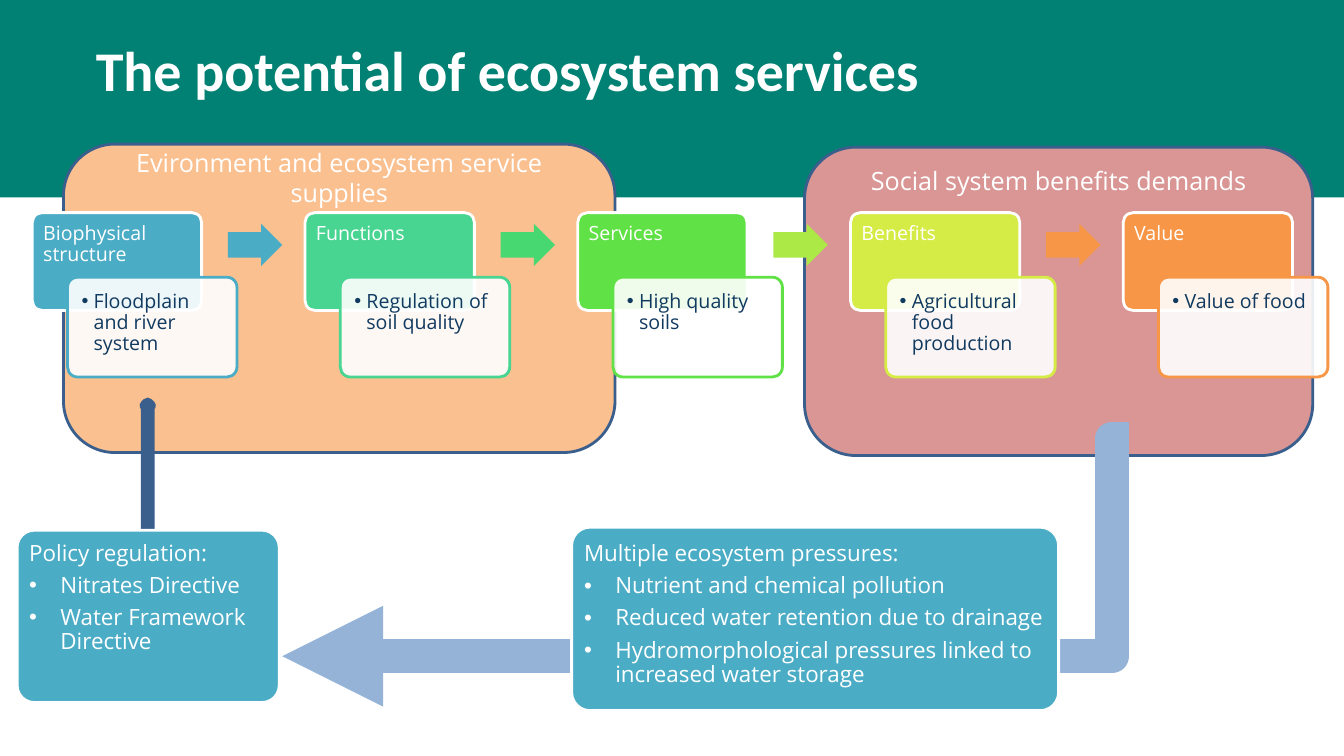
from lxml import etree
from pptx import Presentation
from pptx import util as u
from pptx.dml.color import RGBColor
from pptx.enum import shapes, text
from pptx.oxml.ns import qn

HUES = {
    "band": "008173", "peach": "FAC090", "rose": "D99694", "edge": "3A5F8C",
    "white": "FFFFFF", "ink": "113A60", "teal": "4BACC6", "mint": "48D491",
    "jade": "47D872", "green": "60E146", "lime": "ACE946", "lemon": "D5EC46",
    "amber": "F79646", "blue": "4F81BD", "sky": "95B3D7",
}
KIND = shapes.MSO_SHAPE
TOP = text.MSO_ANCHOR.TOP
MIDDLE = text.MSO_ANCHOR.MIDDLE
LEFT = text.PP_ALIGN.LEFT
CENTER = text.PP_ALIGN.CENTER


class Deck:
    face = "Open Sans"

    def __init__(self):
        self.prs = Presentation()
        self.prs.slide_width = u.Inches(13.33)
        self.prs.slide_height = u.Inches(7.5)
        self.slide = self.prs.slides.add_slide(self.prs.slide_layouts[5])
        self.items = self.slide.shapes

    def rgb(self, hue):
        return RGBColor.from_string(HUES[hue])

    def font(self, para, size, hue, face=None, bold=False):
        para.font.size = u.Pt(size)
        para.font.name = face or self.face
        para.font.bold = bold
        para.font.color.rgb = self.rgb(hue)

    def shape(self, kind, box, fill, edge=None, width=2, adj=(), alpha=None):
        item = self.items.add_shape(kind, *map(u.Inches, box))
        item.shadow.inherit = False
        item.fill.solid()
        item.fill.fore_color.rgb = self.rgb(fill)
        if alpha:
            tint = item._element.spPr.find(qn("a:solidFill")).find(qn("a:srgbClr"))
            etree.SubElement(tint, qn("a:alpha"), val=str(alpha * 1000))
        if edge:
            item.line.color.rgb = self.rgb(edge)
            item.line.width = u.Pt(width)
        else:
            item.line.fill.background()
        for i, val in enumerate(adj):
            item.adjustments[i] = val
        return item

    def label(self, item, lines, size, hue, pad, after, hang=0, first=0):
        frame = item.text_frame
        frame.word_wrap = True
        frame.vertical_anchor = TOP
        frame.margin_left = frame.margin_right = u.Inches(pad[0])
        frame.margin_top = frame.margin_bottom = u.Inches(pad[1])
        for i, line in enumerate(lines):
            para = frame.paragraphs[0] if i == 0 else frame.add_paragraph()
            para.text = line
            para.alignment = LEFT
            para.line_spacing = 0.9
            para.space_after = u.Pt(after)
            if hang and i >= first:
                props = para._p.get_or_add_pPr()
                props.set("marL", str(u.Inches(hang)))
                props.set("indent", str(-u.Inches(hang)))
                etree.SubElement(props, qn("a:buFont"), typeface="Arial")
                etree.SubElement(props, qn("a:buChar"), char="•")
            self.font(para, size, hue)

    def title(self, words, box):
        item = self.items.title
        item.left, item.top, item.width, item.height = map(u.Inches, box)
        frame = item.text_frame
        frame.auto_size = text.MSO_AUTO_SIZE.NONE
        frame.vertical_anchor = TOP
        para = frame.paragraphs[0]
        para.text = words
        para.alignment = LEFT
        self.font(para, 40, "white", "Calibri", True)
        self.items._spTree.append(item._element)

    def panel(self, box, fill, head):
        self.shape(KIND.ROUNDED_RECTANGLE, box, fill, "edge")
        left, top, width, _ = box
        spot = (left + 0.15, top + 0.03, width - 0.3, 0.6)
        frame = self.items.add_textbox(*map(u.Inches, spot)).text_frame
        frame.word_wrap = True
        frame.vertical_anchor = MIDDLE
        frame.margin_top = frame.margin_bottom = 0
        para = frame.paragraphs[0]
        para.text = head
        para.alignment = CENTER
        self.font(para, 18, "white")

    def stage(self, left, hue, head, note, after):
        card = self.shape(KIND.ROUNDED_RECTANGLE, (left, 2.11, 1.68, 0.97),
                          hue, "white", adj=[0.1])
        self.label(card, [head], 14, "white", (0.08, 0.08), 4.9)
        leaf = self.shape(KIND.ROUNDED_RECTANGLE, (left + 0.35, 2.75, 1.68, 0.99),
                          "white", hue, adj=[0.1], alpha=90)
        self.label(leaf, [note], 14, "ink", (0.11, 0.11), 2.1, hang=0.12)
        if after:
            self.shape(KIND.RIGHT_ARROW, (left + 1.94, 2.22, 0.54, 0.42),
                       after, adj=[0.6, 0.5])

    def block(self, box, lines, pad):
        item = self.shape(KIND.ROUNDED_RECTANGLE, box, "teal", "white", adj=[0.1])
        self.label(item, lines, 16, "white", pad, 5.6, hang=0.31, first=1)

    def elbow(self, start, end, hue, width, bend):
        link = self.items.add_connector(
            shapes.MSO_CONNECTOR.ELBOW, *map(u.Inches, start + end))
        link.line.color.rgb = self.rgb(hue)
        link.line.width = u.Pt(width)
        props = link._element.spPr
        etree.SubElement(props.find(qn("a:ln")), qn("a:tailEnd"), type="triangle")
        etree.SubElement(props, qn("a:effectLst"))
        shape = props.find(qn("a:prstGeom"))
        marks = shape.find(qn("a:avLst"))
        if marks is None:
            marks = etree.SubElement(shape, qn("a:avLst"))
        etree.SubElement(marks, qn("a:gd"), name="adj1",
                         fmla=f"val {round(bend * 100000)}")


def main():
    deck = Deck()
    deck.shape(KIND.RECTANGLE, (0, 0, 13.33, 1.96), "band")
    deck.panel((0.63, 1.43, 5.47, 3.06), "peach",
               "Evironment and ecosystem service supplies")
    deck.panel((7.98, 1.46, 5.04, 3.06), "rose", "Social system benefits demands")

    stages = [
        ("teal", "Biophysical structure", "Floodplain and river system", "teal"),
        ("mint", "Functions", "Regulation of soil quality", "jade"),
        ("green", "Services", "High quality soils", "lime"),
        ("lemon", "Benefits", "Agricultural food production", "amber"),
        ("amber", "Value", "Value of food", None),
    ]
    step = 10.82 / (len(stages) - 1)
    for i, stage in enumerate(stages):
        deck.stage(0.32 + i * step, *stage)

    deck.shape(KIND.UP_ARROW, (1.44, 4, 0.05, 2.03), "blue", "edge", 8)
    deck.block((0.17, 5.26, 2.6, 1.71), [
        "Policy regulation:",
        "Nitrates Directive",
        "Water Framework Directive",
    ], (0.07, 0.07))
    deck.elbow((11.2, 4.35), (2.8, 6.51), "sky", 24, 0.02)
    deck.block((5.67, 5.23, 4.83, 1.82), [
        "Multiple ecosystem pressures:",
        "Nutrient and chemical pollution",
        "Reduced water retention due to drainage",
        "Hydromorphological pressures linked to increased water storage",
    ], (0.07, 0.1))
    deck.title("The potential of ecosystem services", (0.85, 0.3, 11.78, 1.45))
    deck.prs.save("out.pptx")


if __name__ == "__main__":
    main()
